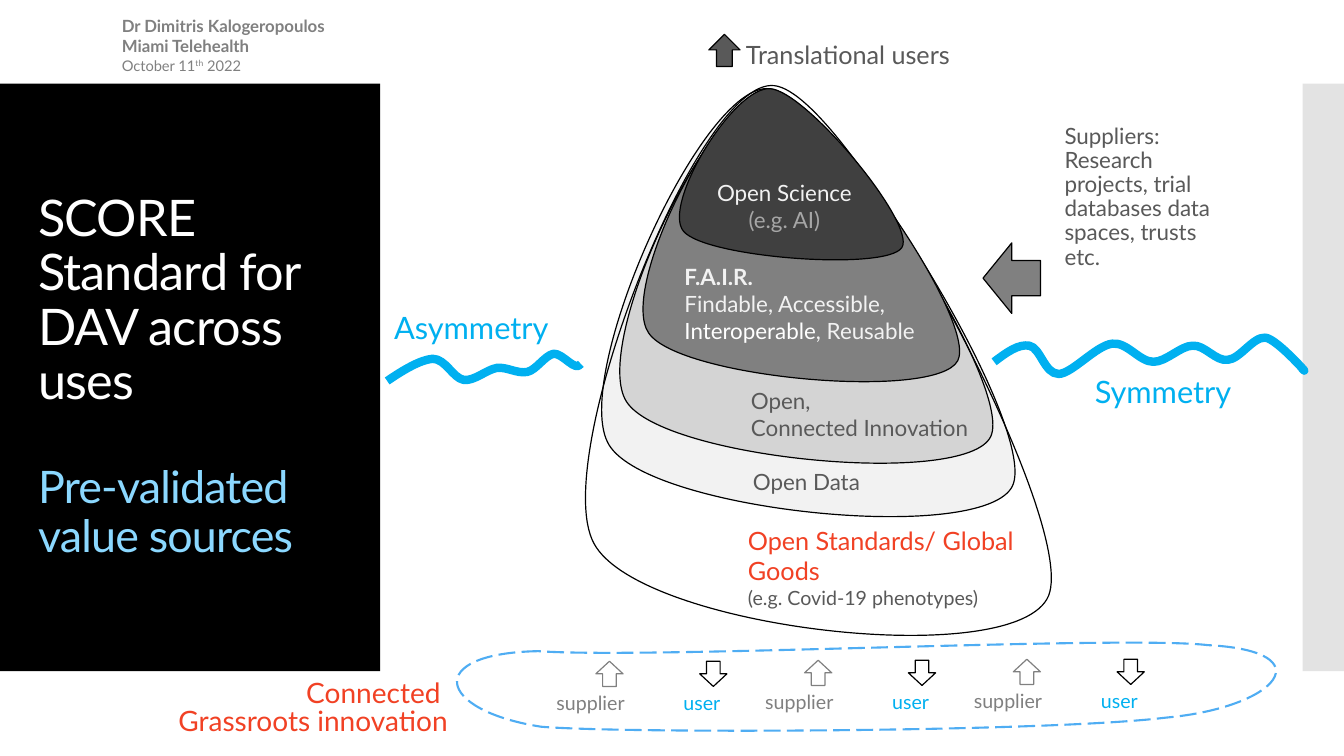
from lxml.etree import SubElement
from pptx import Presentation
from pptx.dml.color import RGBColor
from pptx.enum.dml import MSO_LINE
from pptx.enum.shapes import MSO_SHAPE
from pptx.enum.text import MSO_ANCHOR, MSO_AUTO_SIZE, PP_ALIGN
from pptx.oxml.ns import qn
from pptx.util import Inches, Pt

GREY, MID, PALE = "595959", "808080", "F2F2F2"
BLUE, RED, BLACK = "00B0F0", "F14124", "000000"
EGG_SIZE = (4.62, 5.46)
EGG = [(1.87, 0), (1.12, -0.09), (-0.37, 3.7), (0.08, 4.54), (0.53, 5.39),
       (4.28, 5.82), (4.59, 5.06), (4.89, 4.31), (2.62, 0.08), (1.87, 0)]
LOOP = [(0.79, 0.12), (-0.36, 0.14), (-0.22, 0.71), (0.82, 0.87), (1.7, 0.94),
        (5.87, 0.92), (7.01, 0.78), (8.13, 0.68), (8.59, 0.12), (7.43, 0.06),
        (6.58, -0.04), (1.9, 0.2), (0.79, 0.12)]
LEFT_WAVE = [(0.03, 0.77), (0.19, 0.66), (0.36, 0.56), (0.48, 0.55), (0.61, 0.55),
             (0.68, 0.74), (0.79, 0.76), (0.9, 0.77), (1.01, 0.66), (1.12, 0.64),
             (1.22, 0.63), (1.32, 0.7), (1.42, 0.68), (1.51, 0.66), (1.59, 0.52),
             (1.68, 0.5), (1.77, 0.49), (1.9, 0.69), (1.95, 0.6)]
RIGHT_WAVE = [(0, 0.24), (0.12, 0.15), (0.24, 0.06), (0.35, 0.08), (0.46, 0.1),
              (0.5, 0.36), (0.64, 0.36), (0.77, 0.36), (1.01, 0.08), (1.17, 0.06),
              (1.32, 0.04), (1.44, 0.24), (1.58, 0.24), (1.71, 0.24), (1.85, 0.08),
              (1.97, 0.08), (2.09, 0.07), (2.2, 0.24), (2.32, 0.22), (2.44, 0.21),
              (2.57, -0.01), (2.69, 0), (2.81, 0.01), (3.18, 0.44), (3.05, 0.3)]


def color(value):
    return RGBColor.from_string(value)


def paint(shape, fill=None, line=None, width=0.85):
    shape.shadow.inherit = False
    if fill:
        shape.fill.solid()
        shape.fill.fore_color.rgb = color(fill)
    else:
        shape.fill.background()
    if line:
        shape.line.color.rgb = color(line)
        shape.line.width = Pt(width)
    else:
        shape.line.fill.background()
    return shape


def preset(page, kind, left, top, width, height, **look):
    box = [Inches(value) for value in (left, top, width, height)]
    return paint(page.shapes.add_shape(kind, *box), **look)


def reach(values, steps=20):
    """Lowest and highest value along joined cubic curves, on one axis."""
    found = []
    for first in range(0, len(values) - 1, 3):
        a, b, c, d = values[first:first + 4]
        for t in (step / steps for step in range(steps + 1)):
            s = 1 - t
            found.append(a * s ** 3 + 3 * b * t * s * s + 3 * c * t * t * s + d * t ** 3)
    return int(min(found)), int(max(found))


def curve(page, left, top, points, stretch=(1, 1), close=False, **look):
    """Draw joined cubic curves; each takes three points after its start."""
    places = [(Inches(left + x * stretch[0]), Inches(top + y * stretch[1]))
              for x, y in points]
    (west, east), (north, south) = [reach(values) for values in zip(*places)]
    builder = page.shapes.build_freeform(west, north, scale=1.0)
    builder.add_line_segments([(east, south)], close=False)
    shape = builder.convert_to_shape()
    outline = next(shape._element.iter(qn("a:path")))
    for child in list(outline):
        outline.remove(child)
    for index, (x, y) in enumerate(places):
        if index == 0:
            part = SubElement(outline, qn("a:moveTo"))
        elif index % 3 == 1:
            part = SubElement(outline, qn("a:cubicBezTo"))
        SubElement(part, qn("a:pt"), x=str(x - west), y=str(y - north))
    if close:
        SubElement(outline, qn("a:close"))
    return paint(shape, **look)


def text(page, left, top, width, height, paras, size=16, ink=GREY, bold=False,
         align=PP_ALIGN.LEFT, spacing=None, wrap=False, grow=True,
         anchor=MSO_ANCHOR.TOP, gap=0, tracking=None):
    """Each paragraph is a list of (words, changes) spans; gap separates paragraphs."""
    box = page.shapes.add_textbox(*[Inches(v) for v in (left, top, width, height)])
    frame = box.text_frame
    frame.word_wrap = wrap
    frame.auto_size = MSO_AUTO_SIZE.SHAPE_TO_FIT_TEXT if grow else MSO_AUTO_SIZE.NONE
    frame.vertical_anchor = anchor
    for index, spans in enumerate(paras):
        para = frame.add_paragraph() if index else frame.paragraphs[0]
        para.alignment = align
        if spacing:
            para.line_spacing = spacing
        if index and gap:
            para.space_before = Pt(gap)
        for words, changes in spans:
            span = para.add_run()
            span.text = words
            span.font.name = "Lato"
            span.font.size = Pt(changes.get("size", size))
            span.font.bold = changes.get("bold", bold)
            span.font.color.rgb = color(changes.get("ink", ink))
            properties = span.font._element
            if tracking:
                properties.set("spc", str(tracking))
            if "raised" in changes:
                properties.set("baseline", str(changes["raised"]))


def title_panel(page, left, top, width, height):
    preset(page, MSO_SHAPE.RECTANGLE, left, top, width, height, fill=BLACK)
    text(page, left + 0.28, top + 0.4, 3.22, 5.03,
         [[("SCORE Standard for DAV across uses", {})],
          [("Pre-validated value sources", {"size": 32, "ink": "8BD8FF"})]],
         size=36, ink="FFFFFF", spacing=0.9, wrap=True, grow=False,
         anchor=MSO_ANCHOR.MIDDLE, gap=39, tracking=-60)


def side_bar(page, left, top, width, height):
    bar = preset(page, MSO_SHAPE.RECTANGLE, left, top, width, height, fill="C8C8C8")
    tone = bar._element.spPr.find(qn("a:solidFill"))[0]
    SubElement(tone, qn("a:alpha"), val="50000")


def speaker(page, left, top):
    plain = {"size": 10.5, "bold": False}
    text(page, left, top, 3.84, 0.88,
         [[("Dr Dimitris Kalogeropoulos", {})], [("Miami Telehealth", {})],
          [("October 11", plain), ("th", {**plain, "raised": 30000}), (" 2022", plain)]],
         size=12, ink=MID, bold=True, wrap=True)


def layers(page, left, top):
    """Nested egg outlines that share an apex, with a label in each."""
    for dx, dy, width, height, fill in [
            (0.16, 0.03, 4.1, 4.25, PALE), (0.34, 0.1, 3.7, 3.65, "D4D4D4"),
            (0, 0, *EGG_SIZE, None), (0.57, 0.06, 3.14, 2.88, MID),
            (0.93, 0.03, 2.22, 1.7, "404040")]:
        curve(page, left + dx, top + dy, EGG, close=True, fill=fill, line=BLACK,
              stretch=(width / EGG_SIZE[0], height / EGG_SIZE[1]))
    text(page, left + 1.18, top + 0.88, 1.58, 0.64,
         [[("Open Science", {})], [("(e.g. AI)", {"ink": "A6A6A6"})]],
         ink=PALE, align=PP_ALIGN.CENTER)
    text(page, left + 0.88, top + 1.71, 2.88, 0.91,
         [[("F.A.I.R.", {"bold": True})],
          [("Findable, Accessible, ", {}), ("Interoperable", {"ink": "FFFFFF"}),
           (", Reusable", {})]], ink=PALE, wrap=True)
    text(page, left + 1.54, top + 2.94, 2.45, 0.64,
         [[("Open,", {})], [("Connected Innovation", {})]])
    text(page, left + 1.56, top + 3.75, 1.3, 0.37, [[("Open Data", {})]])
    text(page, left + 1.51, top + 4.31, 2.97, 0.94,
         [[("Open Standards/ Global Goods", {})],
          [("(e.g. Covid-19 phenotypes)", {"size": 14, "ink": GREY})]],
         size=18, ink=RED, wrap=True)


def translational_users(page, left, top):
    preset(page, MSO_SHAPE.UP_ARROW, left, top, 0.31, 0.32, fill=GREY, line=BLACK)
    text(page, left + 0.27, top, 2.56, 0.4, [[("Translational users", {})]], size=18)


def suppliers(page, left, top):
    preset(page, MSO_SHAPE.LEFT_ARROW, left, top + 1.22, 0.57, 0.7, fill=MID, line=BLACK)
    text(page, left + 0.71, top, 1.68, 1.8,
         [[("Suppliers: Research projects, trial databases data spaces, trusts", {})],
          [("etc.", {})]], spacing=0.9, wrap=True)


def wave(page, left, top, points, label, dx, dy, width):
    curve(page, left, top, points, line=BLUE, width=6)
    text(page, left + dx, top + dy, width, 0.47, [[(label, {})]], size=22, ink=BLUE)


def grassroots(page, left, top):
    loop = curve(page, left + 3.26, top, LOOP, close=True, line="4FADF3", width=1.5)
    loop.line.dash_style = MSO_LINE.LONG_DASH
    text(page, left, top + 0.36, 3.25, 0.67,
         [[("Connected ", {})], [("Grassroots innovation", {})]],
         size=20, ink=RED, align=PP_ALIGN.RIGHT, spacing=0.85)
    roles = [("supplier", MSO_SHAPE.UP_ARROW, MID, MID, 0, -0.49, 0.99),
             ("user", MSO_SHAPE.DOWN_ARROW, BLACK, BLUE, 1.03, -0.26, 0.62)]
    for pair in range(3):
        for label, kind, line, ink, offset, shift, width in roles:
            x = left + 4.62 + 2.07 * pair + offset
            y = top + 0.22 - 0.01 * pair
            preset(page, kind, x, y, 0.27, 0.25, line=line)
            text(page, x + shift, y + 0.25, width, 0.34, [[(label, {})]], size=14, ink=ink)


def main():
    deck = Presentation()
    deck.slide_width, deck.slide_height = Inches(13.33), Inches(7.5)
    page = deck.slides.add_slide(deck.slide_layouts[6])
    title_panel(page, 0, 0.83, 3.77, 5.83)
    side_bar(page, 12.92, 0.83, 0.41, 5.83)
    speaker(page, 1.11, 0.11)
    layers(page, 5.81, 0.85)
    translational_users(page, 7.03, 0.34)
    suppliers(page, 9.75, 1.19)
    wave(page, 3.81, 3.01, LEFT_WAVE, "Asymmetry", 0, 0, 1.96)
    wave(page, 9.86, 3.35, RIGHT_WAVE, "Symmetry", 0.9, 0.3, 1.76)
    grassroots(page, 1.29, 6.34)
    deck.save("out.pptx")


if __name__ == "__main__":
    main()
